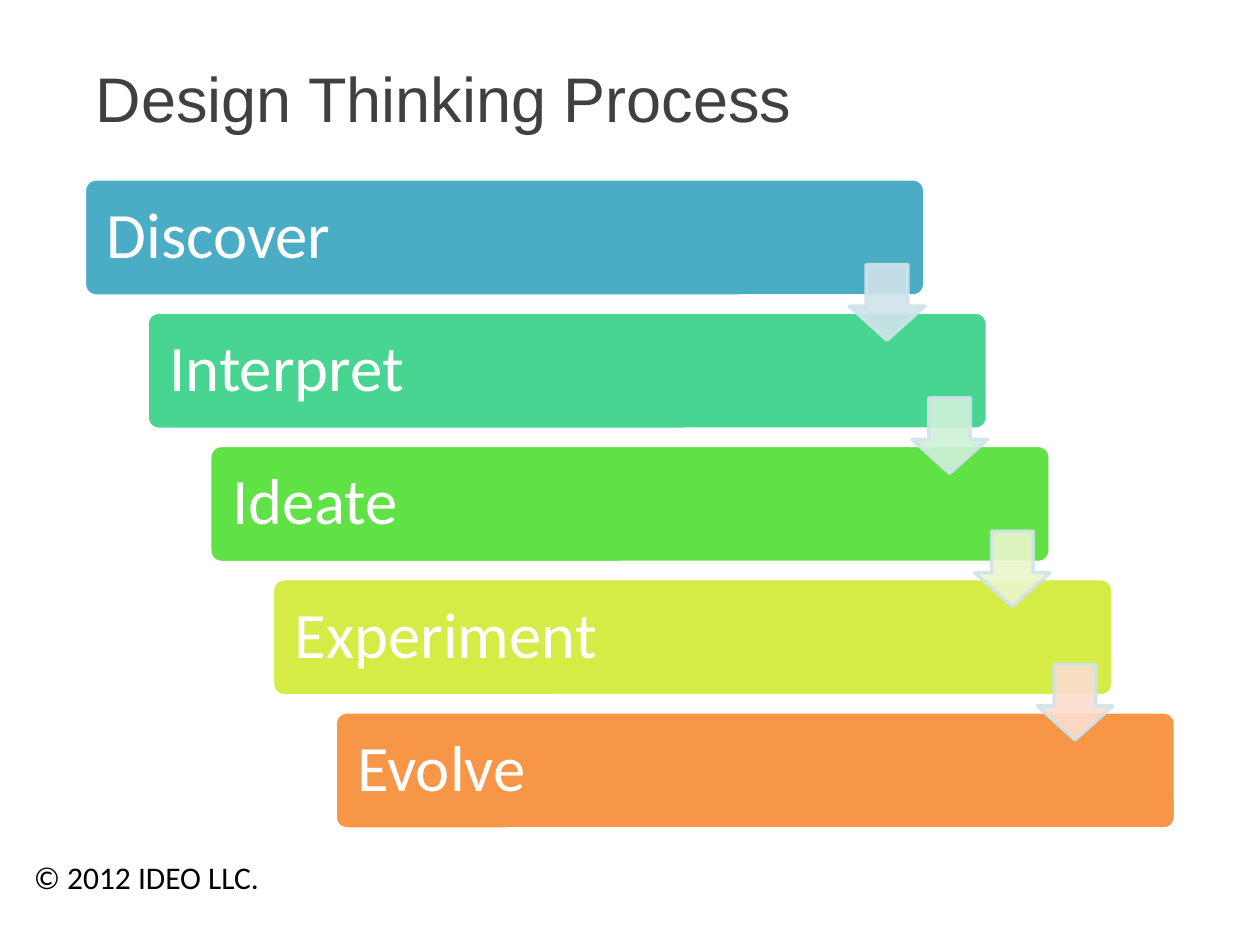
"""Build a slide showing the design thinking process as a staircase of steps."""
from typing import NamedTuple, Optional

from lxml.etree import SubElement
from pptx import Presentation
from pptx.dml.color import RGBColor
from pptx.enum.shapes import MSO_SHAPE as Shape
from pptx.enum.text import MSO_ANCHOR as Anchor, PP_ALIGN as Align
from pptx.oxml.ns import qn
from pptx.util import Inches, Pt

WHITE = RGBColor(0xFF, 0xFF, 0xFF)
BLACK = RGBColor(0x00, 0x00, 0x00)
DARK_GRAY = RGBColor(0x40, 0x40, 0x40)
BLUE = RGBColor(0x4B, 0xAC, 0xC6)
TEAL = RGBColor(0x48, 0xD4, 0x91)
GREEN = RGBColor(0x60, 0xE1, 0x46)
LIME = RGBColor(0xD5, 0xEC, 0x46)
ORANGE = RGBColor(0xF7, 0x96, 0x46)
PALE_BLUE = RGBColor(0xD0, 0xE3, 0xEA)
PALE_TEAL = RGBColor(0xCF, 0xF1, 0xD9)
PALE_LIME = RGBColor(0xEB, 0xF7, 0xCE)
PALE_ORANGE = RGBColor(0xFC, 0xDD, 0xCF)

FIRST_LEFT, FIRST_TOP = 0.67, 1.42
LAST_LEFT, LAST_TOP = 2.66, 5.65
BAR_WIDTH, BAR_HEIGHT = 6.67, 0.93
ARROW_SIZE, ARROW_RIGHT, ARROW_DOWN = 0.6, 6.07, 0.68
ARROW_OPACITY = 90


class Step(NamedTuple):
    label: str
    color: RGBColor
    arrow_color: Optional[RGBColor] = None


STEPS = [
    Step("Discover", BLUE, PALE_BLUE),
    Step("Interpret", TEAL, PALE_TEAL),
    Step("Ideate", GREEN, PALE_LIME),
    Step("Experiment", LIME, PALE_ORANGE),
    Step("Evolve", ORANGE),
]


def add_run(paragraph, text: str, size: int, font: str, color: RGBColor) -> None:
    run = paragraph.add_run()
    run.text = text
    run.font.size = Pt(size)
    run.font.name = font
    run.font.color.rgb = color


def style_shape(shape, fill: RGBColor, line: RGBColor) -> None:
    shape.shadow.inherit = False
    shape.fill.solid()
    shape.fill.fore_color.rgb = fill
    shape.line.color.rgb = line
    shape.line.width = Pt(2)


def add_bar(slide, step: Step, left: float, top: float) -> None:
    bar = slide.shapes.add_shape(
        Shape.ROUNDED_RECTANGLE,
        Inches(left), Inches(top), Inches(BAR_WIDTH), Inches(BAR_HEIGHT),
    )
    bar.adjustments[0] = 0.1
    style_shape(bar, step.color, WHITE)
    frame = bar.text_frame
    frame.vertical_anchor = Anchor.MIDDLE
    frame.margin_left = Inches(0.15)
    paragraph = frame.paragraphs[0]
    paragraph.alignment = Align.LEFT
    paragraph.line_spacing = 0.9
    add_run(paragraph, step.label, 37, "Calibri", WHITE)


def add_arrow(slide, color: RGBColor, left: float, top: float) -> None:
    arrow = slide.shapes.add_shape(
        Shape.DOWN_ARROW,
        Inches(left), Inches(top), Inches(ARROW_SIZE), Inches(ARROW_SIZE),
    )
    arrow.adjustments[0] = 0.45
    arrow.adjustments[1] = 0.55
    arrow.adjustments[0], arrow.adjustments[1] = 0.55, 0.45
    style_shape(arrow, color, PALE_BLUE)
    for color_element in arrow.element.spPr.iter(qn("a:srgbClr")):
        SubElement(color_element, qn("a:alpha"), val=str(ARROW_OPACITY * 1000))


def add_title(slide) -> None:
    title = slide.shapes.title
    title.left, title.top = Inches(0.66), Inches(0.37)
    title.width, title.height = Inches(8.77), Inches(0.8)
    title.text_frame.vertical_anchor = Anchor.MIDDLE
    paragraph = title.text_frame.paragraphs[0]
    paragraph.alignment = Align.LEFT
    add_run(paragraph, "Design Thinking Process", 36, "Arial", DARK_GRAY)


def add_copyright(slide) -> None:
    box = slide.shapes.add_textbox(Inches(0.17), Inches(6.76), Inches(2.07), Inches(0.4))
    box.text_frame.word_wrap = False
    add_run(box.text_frame.paragraphs[0], "© 2012 IDEO LLC.", 18, "Calibri", BLACK)


def main() -> None:
    presentation = Presentation()
    presentation.slide_width, presentation.slide_height = Inches(10), Inches(7.5)
    slide = presentation.slides.add_slide(presentation.slide_layouts[5])
    add_title(slide)

    gaps = len(STEPS) - 1
    positions = [
        (FIRST_LEFT + index * (LAST_LEFT - FIRST_LEFT) / gaps,
         FIRST_TOP + index * (LAST_TOP - FIRST_TOP) / gaps)
        for index in range(len(STEPS))
    ]
    for step, (left, top) in zip(STEPS, positions):
        add_bar(slide, step, left, top)
    for step, (left, top) in zip(STEPS, positions):
        if step.arrow_color is not None:
            add_arrow(slide, step.arrow_color, left + ARROW_RIGHT, top + ARROW_DOWN)

    add_copyright(slide)
    presentation.save("out.pptx")


if __name__ == "__main__":
    main()
